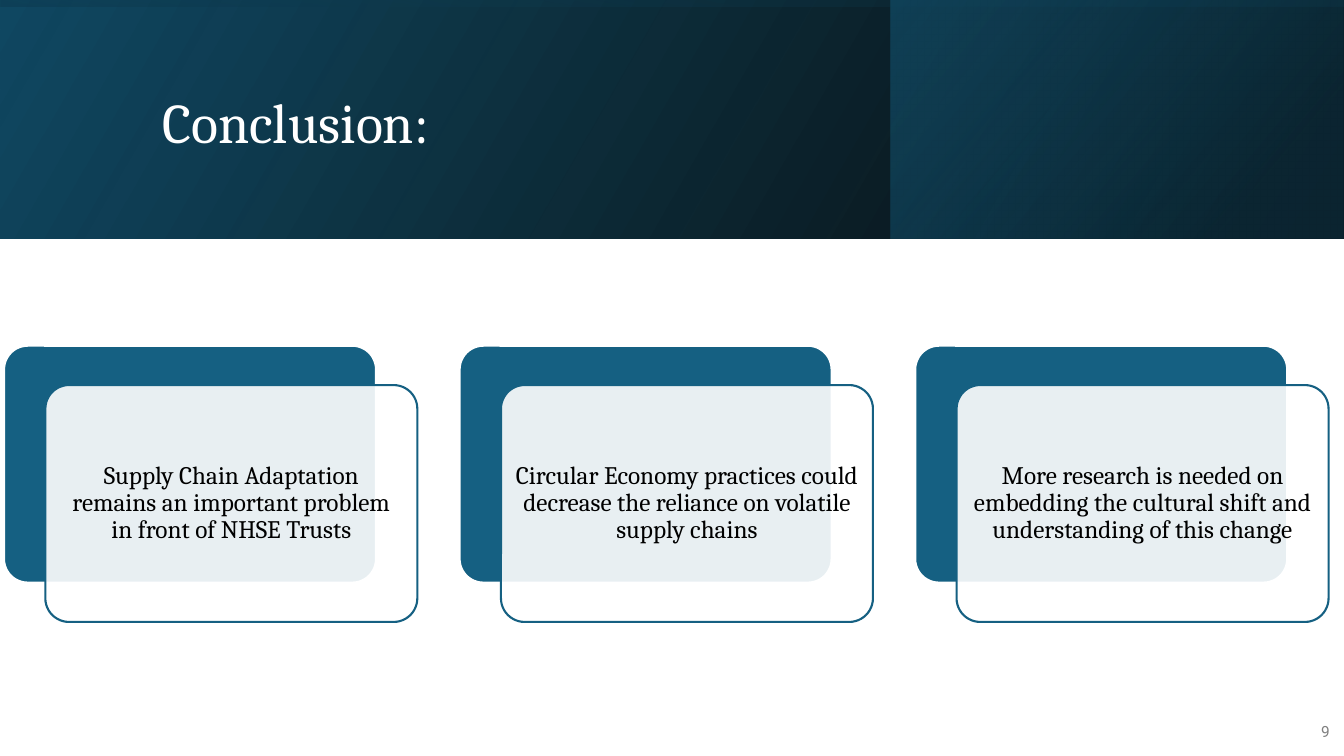
from dataclasses import dataclass

from lxml.etree import SubElement
from pptx import Presentation
from pptx.dml.color import RGBColor
from pptx.enum.shapes import MSO_SHAPE
from pptx.enum.text import MSO_ANCHOR, PP_ALIGN
from pptx.oxml.ns import qn
from pptx.util import Pt

WHITE = RGBColor(0xFF, 0xFF, 0xFF)
BLACK = RGBColor(0x00, 0x00, 0x00)
GREY = RGBColor(0x80, 0x80, 0x80)
TEAL = RGBColor(0x15, 0x60, 0x82)
DEEP_TEAL = RGBColor(0x10, 0x48, 0x62)
NAVY = RGBColor(0x0B, 0x30, 0x41)

SLIDE_W, SLIDE_H = 960, 540
BAND_H = 170.64
CARD_W, CARD_H = 265.68, 169.2
CARD_LEFT, CARD_TOP, CARD_PITCH = 2.88, 246.96, 325.44
FRONT_DX, FRONT_DY = 29.52, 28.08
TEXT_INSET = 5.04


@dataclass(frozen=True)
class Box:
    left: float
    top: float
    width: float
    height: float

    def lengths(self) -> list:
        return [Pt(v) for v in (self.left, self.top, self.width, self.height)]


@dataclass(frozen=True)
class Stop:
    position: float
    color: RGBColor
    opacity: int


@dataclass(frozen=True)
class Band:
    box: Box
    stops: tuple[Stop, Stop]
    angle: int  # counter-clockwise
    rotation: int = 0


BANDS = [
    Band(Box(0, 0, SLIDE_W, BAND_H),
         (Stop(0, BLACK, 96), Stop(1, DEEP_TEAL, 100)), 30),
    Band(Box(636.48, 0, 323, BAND_H),
         (Stop(0.19, NAVY, 68), Stop(1, TEAL, 48)), 40),
    Band(Box((SLIDE_W - BAND_H) / 2, (BAND_H - SLIDE_W) / 2, BAND_H, SLIDE_W),
         (Stop(0.23, DEEP_TEAL, 16), Stop(0.99, BLACK, 45)), 10, 270),
]

CONCLUSIONS = [
    "Supply Chain Adaptation remains an important problem in front of NHSE Trusts",
    "Circular Economy practices could decrease the reliance on volatile supply chains",
    "More research is needed on embedding the cultural shift and understanding of this change",
]


def set_opacity(sp, opacities: list[int]) -> None:
    """Give the colours of the shape, in file order, these opacities in percent."""
    colors = sp._element.spPr.iter(qn("a:srgbClr"))
    for color, opacity in zip(colors, opacities):
        SubElement(color, qn("a:alpha")).set("val", str(opacity * 1000))


def add_band(s, band: Band) -> None:
    sp = s.shapes.add_shape(MSO_SHAPE.RECTANGLE, *band.box.lengths())
    sp.shadow.inherit = False
    sp.rotation = band.rotation
    sp._element.spPr.find(qn("a:xfrm")).set("flipH", "1")
    sp.fill.gradient()
    sp.fill.gradient_angle = band.angle
    for target, stop in zip(sp.fill.gradient_stops, band.stops):
        target.position = stop.position
        target.color.rgb = stop.color
    set_opacity(sp, [stop.opacity for stop in band.stops])
    sp.line.fill.background()


def add_panel(s, box: Box, fill: RGBColor, line: RGBColor, opacity: int = 100) -> None:
    sp = s.shapes.add_shape(MSO_SHAPE.ROUNDED_RECTANGLE, *box.lengths())
    sp.adjustments[0] = 0.1
    sp.shadow.inherit = False
    sp.fill.solid()
    sp.fill.fore_color.rgb = fill
    if opacity < 100:
        set_opacity(sp, [opacity])
    sp.line.color.rgb = line
    sp.line.width = Pt(1.5)


def write(sp, text: str, font: str, size: float, color: RGBColor,
          align: PP_ALIGN, spacing: float = 1.0, inset: float | None = None) -> None:
    tf = sp.text_frame
    frame = {"word_wrap": True, "vertical_anchor": MSO_ANCHOR.MIDDLE}
    if inset is not None:
        sides = ("left", "top", "right", "bottom")
        frame |= {f"margin_{side}": Pt(inset) for side in sides}
    p = tf.paragraphs[0]
    r = p.add_run()
    r.text = text
    r.font.color.rgb = color
    formats = [
        (tf, frame),
        (p, {"alignment": align, "line_spacing": spacing}),
        (r.font, {"name": font, "size": Pt(size)}),
    ]
    for target, values in formats:
        for name, value in values.items():
            setattr(target, name, value)


def add_card(s, left: float, text: str) -> None:
    front_left, front_top = left + FRONT_DX, CARD_TOP + FRONT_DY
    add_panel(s, Box(left, CARD_TOP, CARD_W, CARD_H), TEAL, WHITE)
    add_panel(s, Box(front_left, front_top, CARD_W, CARD_H), WHITE, TEAL, 90)
    text_box = Box(front_left + TEXT_INSET, front_top + TEXT_INSET,
                   CARD_W - 2 * TEXT_INSET, CARD_H - 2 * TEXT_INSET)
    sp = s.shapes.add_textbox(*text_box.lengths())
    write(sp, text, "Cambria", 18, BLACK, PP_ALIGN.CENTER, 0.9, TEXT_INSET)


def add_title(s) -> None:
    """Place the title placeholder in front of the bands."""
    title = s.shapes.title
    s.shapes._spTree.append(title._element)
    title.left, title.top, title.width, title.height = Box(
        108.72, 27.36, 765.36, 123.84).lengths()
    write(title, "Conclusion:", "Cambria", 40, WHITE, PP_ALIGN.LEFT, 0.9)


def main() -> None:
    prs = Presentation()
    prs.slide_width, prs.slide_height = Pt(SLIDE_W), Pt(SLIDE_H)
    s = prs.slides.add_slide(prs.slide_layouts[5])
    for band in BANDS:
        add_band(s, band)
    add_title(s)
    number = s.shapes.add_textbox(*Box(921.6, 508.32, 35.28, 28.8).lengths())
    write(number, "9", "Roboto", 11, GREY, PP_ALIGN.RIGHT)
    for i, text in enumerate(CONCLUSIONS):
        add_card(s, CARD_LEFT + i * CARD_PITCH, text)
    prs.save("out.pptx")


if __name__ == "__main__":
    main()
